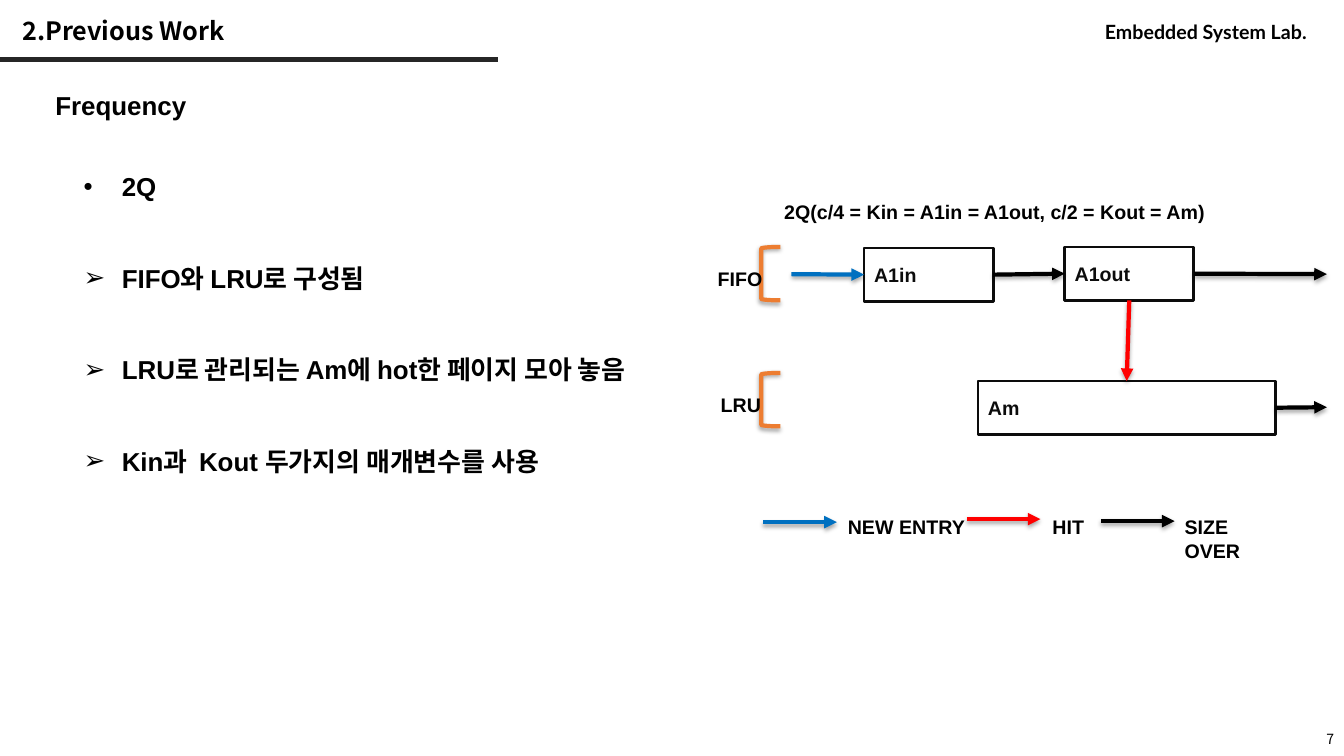
from lxml.etree import SubElement
from pptx import Presentation
from pptx.dml.color import RGBColor
from pptx.enum.shapes import MSO_CONNECTOR as Connector, MSO_SHAPE as Shape
from pptx.enum.text import MSO_ANCHOR as Anchor, MSO_AUTO_SIZE as AutoSize, PP_ALIGN as Align
from pptx.oxml.ns import qn
from pptx.util import Inches, Pt

BLACK, INK, RULE = "000000", "0C0C0C", "262626"
BLUE, RED, ORANGE = "0070C0", "FF0000", "ED7D31"
LATIN, KOREAN, BRAND = "Arial", "Noto Sans CJK KR", "Lato"
TOP, RIGHT, BOTTOM, LEFT = 0, 3, 2, 1


def color(value):
    return RGBColor.from_string(value)


def add_element(parent, tag, **attributes):
    return SubElement(parent, qn(tag), attributes)


def add_bullet(paragraph, character):
    properties = paragraph._p.get_or_add_pPr()
    properties.set("marL", str(Inches(0.38)))
    properties.set("indent", str(Inches(-0.38)))
    bullet_color = add_element(properties, "a:buClr")
    add_element(bullet_color, "a:srgbClr", val=BLACK)
    add_element(properties, "a:buFont", typeface=LATIN)
    add_element(properties, "a:buChar", char=character)


def write(paragraph, text, size=14, font=LATIN, fill=BLACK, bold=True,
          align=None, spacing=None, before=None, bullet=None):
    if bullet:
        add_bullet(paragraph, bullet)
    if align is not None:
        paragraph.alignment = align
    if spacing:
        paragraph.line_spacing = spacing
    if before:
        paragraph.space_before = Pt(before)
    run = paragraph.add_run()
    run.text = text
    run.font.size = Pt(size)
    run.font.name = font
    run.font.bold = bold
    run.font.color.rgb = color(fill)
    add_element(run._r.get_or_add_rPr(), "a:ea", typeface=KOREAN)


def set_shadow(shape, visible=True):
    effects = shape.element.spPr.find(qn("a:effectLst"))
    if effects is None:
        effects = add_element(shape.element.spPr, "a:effectLst")
    if visible:
        shadow = add_element(effects, "a:outerShdw", blurRad=str(Pt(3.1)), dist=str(Pt(1.8)),
                             dir="5400000", rotWithShape="0")
        shadow_color = add_element(shadow, "a:srgbClr", val=BLACK)
        add_element(shadow_color, "a:alpha", val="35000")


class SlideBuilder:
    def __init__(self, presentation):
        self.slide = presentation.slides.add_slide(presentation.slide_layouts[5])
        self.shapes = self.slide.shapes

    def frame(self, shape, anchor=Anchor.TOP):
        frame = shape.text_frame
        frame.word_wrap = True
        frame.auto_size = AutoSize.NONE
        frame.vertical_anchor = anchor
        frame.margin_left = frame.margin_right = Inches(0.1)
        frame.margin_top = frame.margin_bottom = Inches(0.05)
        return frame

    def title(self, text, left, top, width, height):
        title = self.shapes.title
        title.left, title.top = Inches(left), Inches(top)
        title.width, title.height = Inches(width), Inches(height)
        write(self.frame(title, Anchor.MIDDLE).paragraphs[0], text, size=18, font=KOREAN,
              align=Align.LEFT, spacing=0.9)

    def text(self, text, left, top, width, height, anchor=Anchor.TOP, **style):
        box = self.shapes.add_textbox(Inches(left), Inches(top), Inches(width), Inches(height))
        write(self.frame(box, anchor).paragraphs[0], text, **style)

    def bullets(self, items, left, top, width, height, gap):
        box = self.shapes.add_textbox(Inches(left), Inches(top), Inches(width), Inches(height))
        frame = self.frame(box)
        for index, (character, text) in enumerate(items):
            paragraph = frame.add_paragraph() if index else frame.paragraphs[0]
            write(paragraph, text, size=18.5, spacing=1.5, bullet=character,
                  before=gap if index else None)

    def outline(self, kind, left, top, width, height, line, weight):
        shape = self.shapes.add_shape(kind, Inches(left), Inches(top), Inches(width), Inches(height))
        shape.shadow.inherit = False
        shape.fill.background()
        shape.line.color.rgb = color(line)
        shape.line.width = Pt(weight)
        return shape

    def queue(self, text, left, top, width):
        shape = self.outline(Shape.RECTANGLE, left, top, width, 0.53, INK, 2)
        write(self.frame(shape, Anchor.MIDDLE).paragraphs[0], text, fill=INK, align=Align.LEFT)
        return shape

    def bracket(self, left, top):
        set_shadow(self.outline(Shape.LEFT_BRACKET, left, top, 0.19, 0.53, ORANGE, 3))

    def line(self, start, end, fill, arrow=True, source=None, target=None):
        connector = self.shapes.add_connector(Connector.STRAIGHT, *map(Inches, start + end))
        if source:
            connector.begin_connect(*source)
        if target:
            connector.end_connect(*target)
        connector.line.color.rgb = color(fill)
        connector.line.width = Pt(3)
        if arrow:
            add_element(connector.element.spPr.find(qn("a:ln")), "a:tailEnd", type="triangle")
        set_shadow(connector, arrow)


def main():
    presentation = Presentation()
    presentation.slide_width, presentation.slide_height = Inches(13.33), Inches(7.5)
    builder = SlideBuilder(presentation)

    builder.line((0, 0.59), (4.94, 0.59), RULE, arrow=False)
    builder.text("Embedded System Lab.", 10.86, 0.15, 2.49, 0.34, font=BRAND)
    builder.title("2.Previous Work", 0.12, 0.12, 9.71, 0.4)
    builder.text("7", 10.33, 7.17, 3, 0.32, anchor=Anchor.MIDDLE, size=10, font=KOREAN,
                 bold=False, align=Align.RIGHT)
    builder.text("Frequency", 0.45, 0.84, 6.02, 0.72, size=18.5)
    builder.bullets([
        ("•", "2Q"),
        ("➢", "FIFO와 LRU로 구성됨"),
        ("➢", "LRU로 관리되는 Am에 hot한 페이지 모아 놓음"),
        ("➢", "Kin과  Kout 두가지의 매개변수를 사용"),
    ], 0.73, 1.49, 6.29, 4.56, gap=32)

    builder.text("2Q(c/4 = Kin = A1in = A1out, c/2 = Kout = Am)", 7.68, 1.93, 4.56, 0.34)
    a1in = builder.queue("A1in", 8.57, 2.46, 1.28)
    a1out = builder.queue("A1out", 10.56, 2.45, 1.28)
    am = builder.queue("Am", 9.7, 3.78, 2.95)

    builder.line((7.85, 2.72), (8.57, 2.72), BLUE, target=(a1in, LEFT))
    builder.line((9.85, 2.72), (10.56, 2.71), BLACK, source=(a1in, RIGHT), target=(a1out, LEFT))
    builder.line((11.84, 2.71), (13.16, 2.72), BLACK, source=(a1out, RIGHT))
    builder.line((11.2, 2.98), (11.18, 3.78), RED, source=(a1out, BOTTOM), target=(am, TOP))
    builder.line((12.65, 4.04), (13.16, 4.04), BLACK, source=(am, RIGHT))

    for label, left, top, width in [("FIFO", 7.02, 2.45, 0.66), ("LRU", 7.05, 3.7, 0.7)]:
        builder.bracket(7.55, top)
        builder.text(label, left, top + 0.15, width, 0.34)

    for label, fill, arrow_left, arrow_top, text_left, text_width in [
        ("NEW ENTRY", BLUE, 7.57, 5.18, 8.31, 1.39),
        ("HIT", RED, 9.59, 5.15, 10.34, 0.84),
        ("SIZE OVER", BLACK, 10.92, 5.17, 11.65, 1.22),
    ]:
        builder.line((arrow_left, arrow_top), (arrow_left + 0.73, arrow_top), fill)
        builder.text(label, text_left, 5.06, text_width, 0.19)

    presentation.save("out.pptx")


if __name__ == "__main__":
    main()
